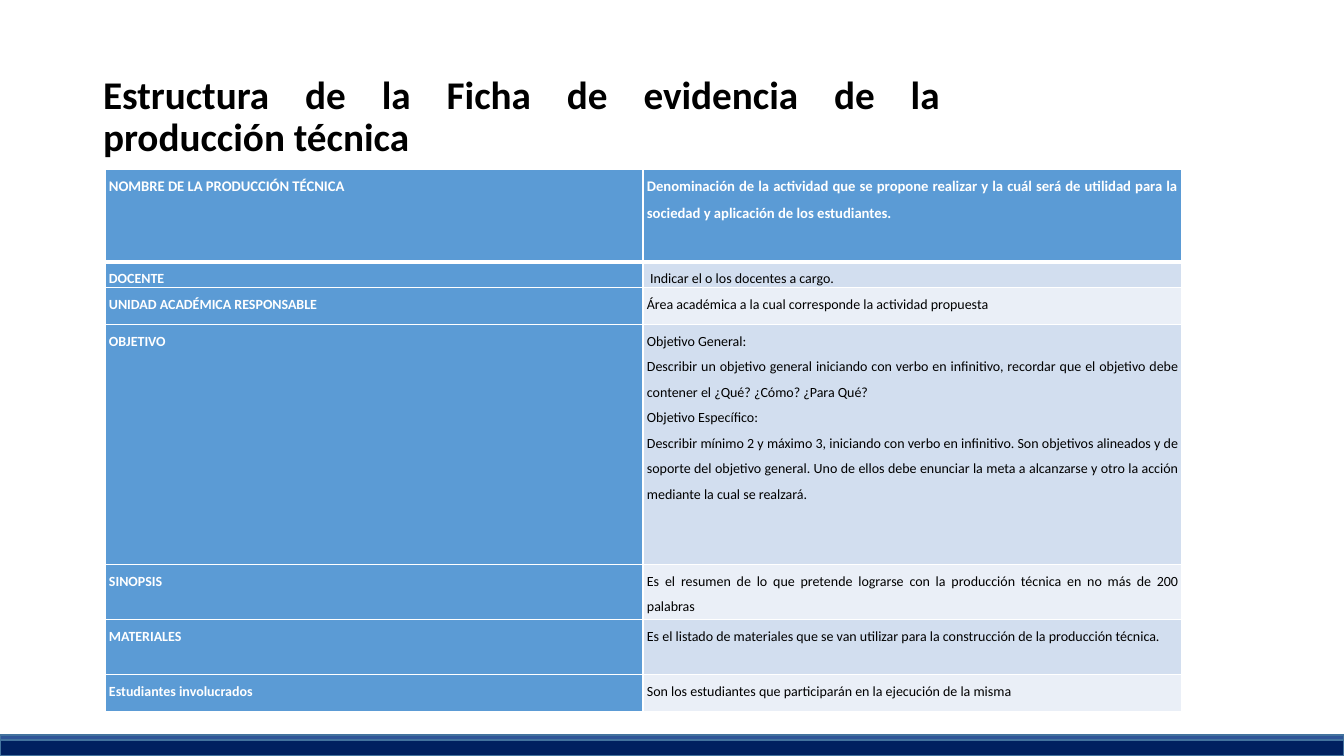
from lxml import etree
from pptx import Presentation
from pptx import util as u
from pptx.dml.color import RGBColor
from pptx.enum import shapes, text
from pptx.oxml import ns

HEADING = "Estructura de la Ficha de evidencia de la producción técnica"
FIELDS = [
    ("NOMBRE DE LA PRODUCCIÓN TÉCNICA", 93, [
        "Denominación de la actividad que se propone realizar y la cuál será de "
        "utilidad para la sociedad y aplicación de los estudiantes."]),
    ("DOCENTE", 20, [" Indicar el o los docentes a cargo."]),
    ("UNIDAD ACADÉMICA RESPONSABLE", 37, [
        "Área académica a la cual corresponde la actividad propuesta"]),
    ("OBJETIVO", 240, [
        "Objetivo General:",
        "Describir un objetivo general iniciando con verbo en infinitivo, recordar "
        "que el objetivo debe contener el ¿Qué? ¿Cómo? ¿Para Qué?",
        "Objetivo Específico:",
        "Describir mínimo 2 y máximo 3, iniciando con verbo en infinitivo. Son "
        "objetivos alineados y de soporte del objetivo general. Uno de ellos debe "
        "enunciar la meta a alcanzarse y otro la acción mediante la cual se realzará."]),
    ("SINOPSIS", 55, [
        "Es el resumen de lo que pretende lograrse con la producción técnica en no "
        "más de 200 palabras"]),
    ("MATERIALES", 55, [
        "Es el listado de materiales que se van utilizar para la construcción de la "
        "producción técnica."]),
    ("Estudiantes involucrados", 37, [
        "Son los estudiantes que participarán en la ejecución de la misma"]),
]
COLUMNS = (538, 539)

WHITE = RGBColor(0xFF, 0xFF, 0xFF)
BLACK = RGBColor(0, 0, 0)
HEADER_BLUE = RGBColor(0x5B, 0x9B, 0xD5)
BANDS = (RGBColor(0xEA, 0xEF, 0xF7), RGBColor(0xD2, 0xDE, 0xEF))
NAVY = RGBColor(0x00, 0x20, 0x60)
ROYAL = RGBColor(0x2F, 0x55, 0x97)
BAR_EDGE = RGBColor(0x43, 0x73, 0x9E)
FOOTER_BARS = [(735, 21, NAVY), (735, 5, ROYAL)]
FONT = "Calibri"
SCALE = 914400 / 100.8


def px(length):
    return u.Emu(round(length * SCALE))


def write(paragraph, wording, size, color, bold, spacing):
    paragraph.alignment = text.PP_ALIGN.JUSTIFY
    paragraph.line_spacing = spacing
    run = paragraph.add_run()
    run.text = wording
    run.font.name = FONT
    run.font.size = u.Pt(size)
    run.font.bold = bold
    run.font.color.rgb = color


def add_borders(cell, top, bottom):
    properties = cell._tc.get_or_add_tcPr()
    for side, points in (("L", 1), ("R", 1), ("T", top), ("B", bottom)):
        line = etree.SubElement(properties, ns.qn(f"a:ln{side}"), w=str(u.Pt(points)))
        fill = etree.SubElement(line, ns.qn("a:solidFill"))
        etree.SubElement(fill, ns.qn("a:srgbClr"), val=str(WHITE))


def fill_cell(cell, paragraphs, row, is_label):
    strong = is_label or row == 0
    cell.margin_left = cell.margin_right = px(4)
    cell.margin_top = cell.margin_bottom = 0
    add_borders(cell, 3 if row == 1 else 1, 3 if row == 0 else 1)
    cell.fill.solid()
    cell.fill.fore_color.rgb = HEADER_BLUE if strong else BANDS[row % 2]
    frame = cell.text_frame
    for index, wording in enumerate(paragraphs):
        paragraph = frame.add_paragraph() if index else frame.paragraphs[0]
        write(paragraph, wording, 10 if row else 10.5,
              WHITE if strong else BLACK, strong, 1.5)


def main():
    deck = Presentation()
    deck.slide_width, deck.slide_height = px(1344), px(756)
    slide = deck.slides.add_slide(deck.slide_layouts[5])

    for top, height, color in FOOTER_BARS:
        bar = slide.shapes.add_shape(
            shapes.MSO_SHAPE.RECTANGLE, 0, px(top), px(1344), px(height))
        bar.shadow.inherit = False
        bar.fill.solid()
        bar.fill.fore_color.rgb = color
        bar.line.color.rgb = BAR_EDGE
        bar.line.width = u.Pt(1)

    heading = slide.shapes.title
    heading.left, heading.top = px(93), px(45)
    heading.width, heading.height = px(857), px(146)
    frame = heading.text_frame
    frame.word_wrap = True
    frame.auto_size = text.MSO_AUTO_SIZE.NONE
    frame.vertical_anchor = text.MSO_ANCHOR.MIDDLE
    write(frame.paragraphs[0], HEADING, 28, BLACK, True, 0.9)

    total = sum(height for _, height, _ in FIELDS)
    sheet = slide.shapes.add_table(
        len(FIELDS), len(COLUMNS), px(105), px(169), px(sum(COLUMNS)), px(total)).table
    for column, width in zip(sheet.columns, COLUMNS):
        column.width = px(width)
    for row, (label, height, description) in enumerate(FIELDS):
        sheet.rows[row].height = px(height)
        fill_cell(sheet.cell(row, 0), [label], row, True)
        fill_cell(sheet.cell(row, 1), description, row, False)

    deck.save("out.pptx")


if __name__ == "__main__":
    main()
